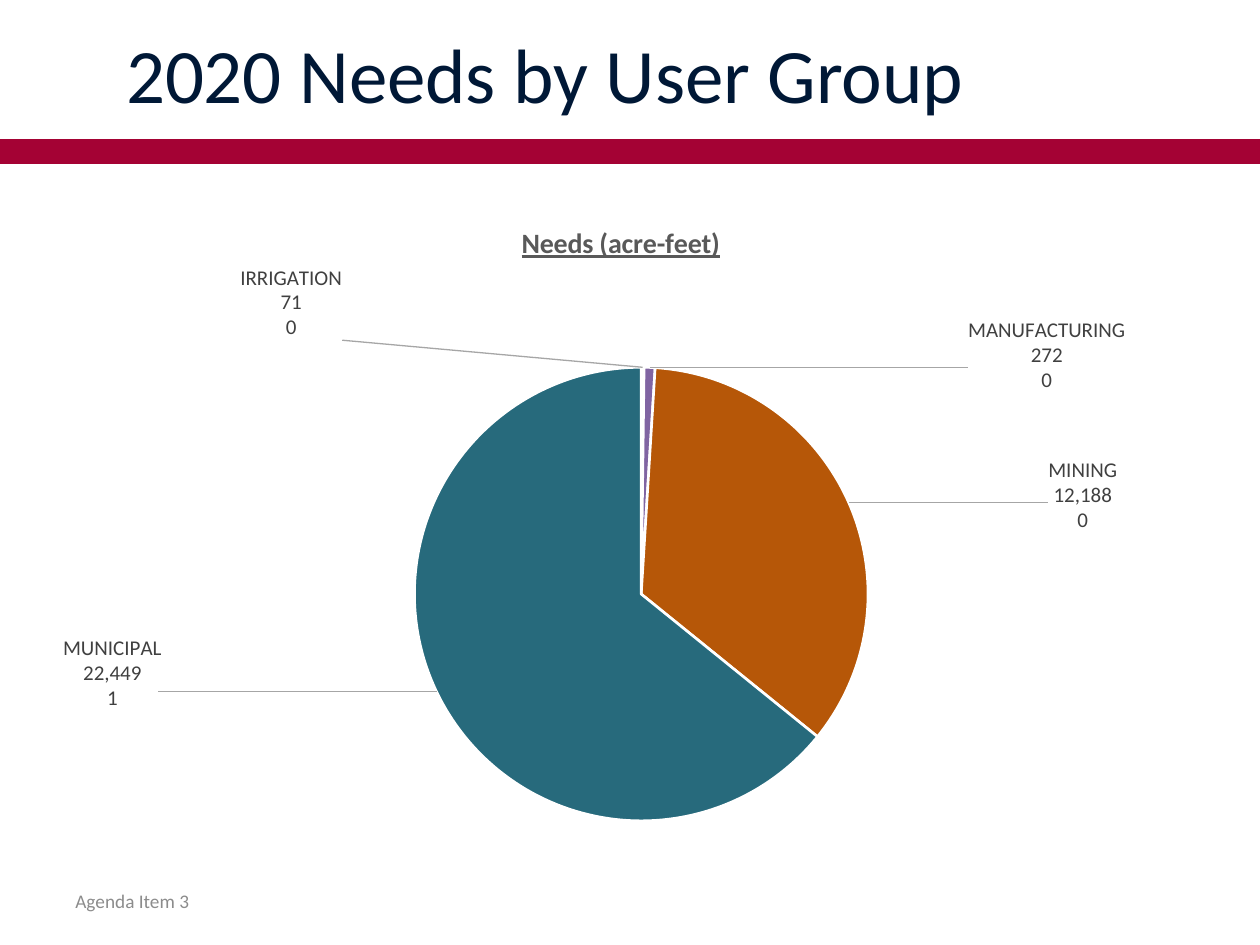
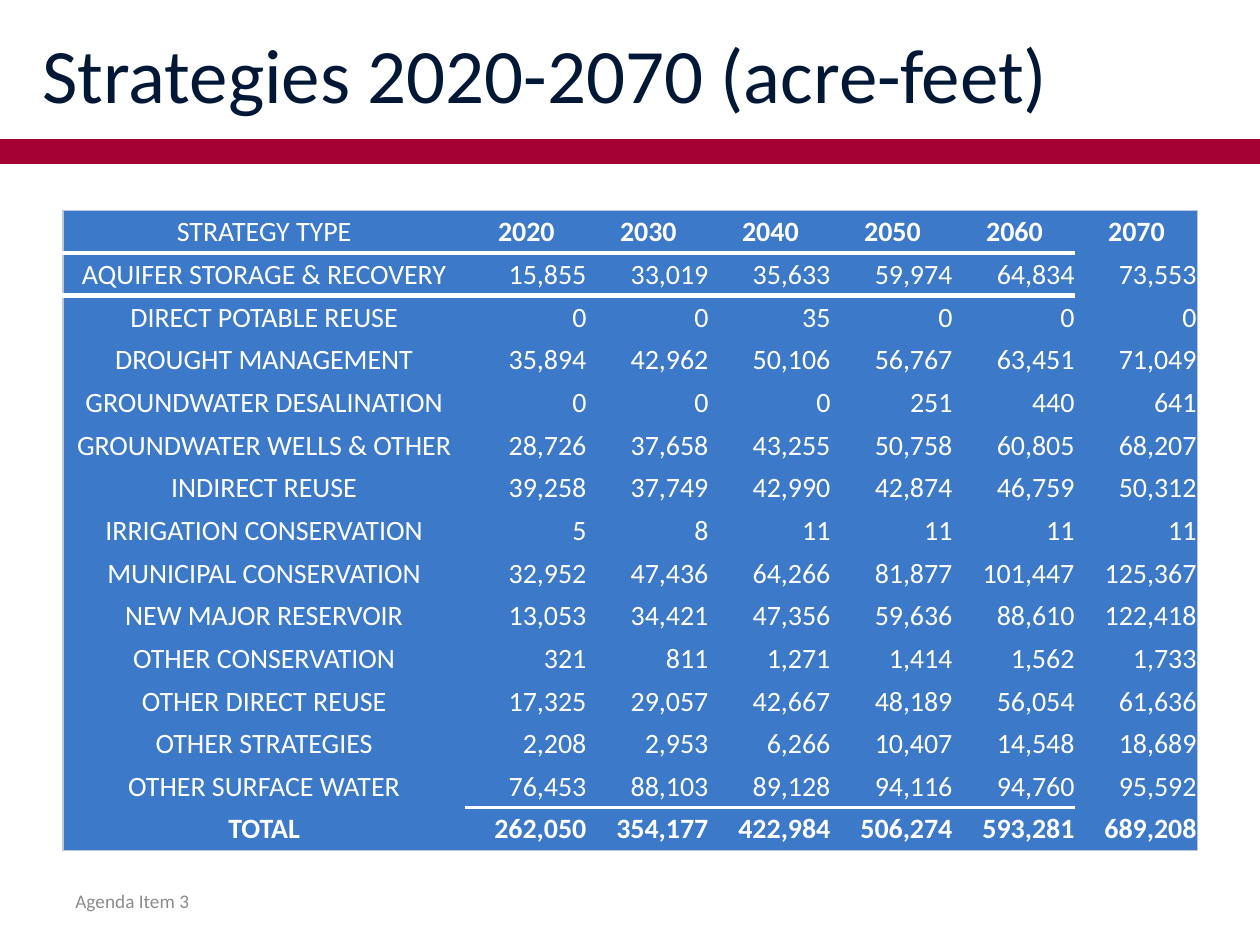
from copy import deepcopy
from pptx import Presentation
from pptx.chart.data import CategoryChartData
from pptx.dml.color import RGBColor
from pptx.enum.chart import XL_CHART_TYPE, XL_LABEL_POSITION
from pptx.enum.shapes import MSO_CONNECTOR
from pptx.enum.text import MSO_ANCHOR, PP_ALIGN
from pptx.oxml import parse_xml
from pptx.oxml.ns import qn
from pptx.oxml.xmlchemy import OxmlElement
from pptx.util import Cm, Pt

PIE = XL_CHART_TYPE.PIE
OUTER = XL_LABEL_POSITION.OUTSIDE_END
STRAIGHT = MSO_CONNECTOR.STRAIGHT
MIDDLE = MSO_ANCHOR.MIDDLE
LEFT, CENTER, RIGHT = PP_ALIGN.LEFT, PP_ALIGN.CENTER, PP_ALIGN.RIGHT

FONT = "Calibri"
NAVY, RED, GREY, WHITE = "001836", "A40234", "8C8C8C", "FFFFFF"
BLUE, EDGE, DARK, TITLE = "3C79C8", "BDC8DD", "404040", "595959"
C_NS = 'xmlns:c="http://schemas.openxmlformats.org/drawingml/2006/chart"'
A_NS = 'xmlns:a="http://schemas.openxmlformats.org/drawingml/2006/main"'
NO_GRID = "{2D5ABB26-0587-4C30-8999-92F81FD0307C}"


def rgb(code):
    return RGBColor.from_string(code)


def style(font, size, color, bold=False):
    font.name, font.size, font.bold = FONT, Pt(size), bold
    font.color.rgb = rgb(color)


deck = Presentation()
deck.slide_width, deck.slide_height = Cm(25.4), Cm(19.05)

# Shared band, title and footer
slides = []
for head in ("2020 Needs by User Group", "Strategies 2020-2070 (acre-feet)"):
    slide = deck.slides.add_slide(deck.slide_layouts[6])
    slides.append(slide)
    band = slide.shapes.add_connector(STRAIGHT, 0, Cm(3.05), Cm(25.4), Cm(3.05))
    band.line.color.rgb = rgb(RED)
    band.line.width = Pt(14)
    band._element.spPr.append(OxmlElement("a:effectLst"))
    for text, spot, size, color, align in (
        (head, (0.2, 0.2, 21.59, 2.54), 44, NAVY, CENTER),
        ("Agenda Item 3", (1.27, 17.65, 5.92, 1.02), 11, GREY, LEFT),
    ):
        box = slide.shapes.add_textbox(*map(Cm, spot))
        frame = box.text_frame
        frame.text = text
        frame.word_wrap = True
        frame.vertical_anchor = MIDDLE
        frame.paragraphs[0].alignment = align
        style(frame.paragraphs[0].runs[0].font, size, color)

# Needs pie: group, value, slice colour, label shift
needs = [
    ("IRRIGATION", 71, "F79646", (-0.31, -0.03)),
    ("LIVESTOCK", 0, "4BACC6", None),
    ("MANUFACTURING", 272, "8064A2", (0.35, 0.05)),
    ("MINING", 12188, "B65708", (0.17, 0.05)),
    ("MUNICIPAL", 22449, "276A7C", (-0.24, -0.09)),
    ("STEAM ELECTRIC POWER", 0, "4D3B62", None),
]
data = CategoryChartData(number_format="#,##0")
data.categories = [need[0] for need in needs]
data.add_series("Needs (acre-feet)", [need[1] for need in needs])
chart = slides[0].shapes.add_chart(
    PIE, Cm(1.27), Cm(3.89), Cm(22.86), Cm(13.26), data).chart
style(chart.font, 10, "000000")
chart.has_legend = False
chart.has_title = True
name = chart.chart_title.text_frame
name.text = "Needs (acre-feet)"
font = name.paragraphs[0].runs[0].font
style(font, 16, TITLE, True)
font.underline = True

# Fixed places for the chart title and the pie
for part, mode, spot in (
    (chart.chart_title._element, "", {"x": 0.4, "y": 0.04}),
    (chart._chartSpace.chart.plotArea, '<c:layoutTarget val="inner"/>',
     {"x": 0.31, "y": 0.26, "w": 0.4, "h": 0.7}),
):
    for old in part.findall(qn("c:layout")):
        part.remove(old)
    modes = "".join(f'<c:{k}Mode val="edge"/>' for k in "xy")
    sizes = "".join(f'<c:{k} val="{v}"/>' for k, v in spot.items())
    layout = parse_xml(f"<c:layout {C_NS}><c:manualLayout>{mode}{modes}{sizes}"
                       "</c:manualLayout></c:layout>")
    text = part.find(qn("c:tx"))
    if text is None:
        part.insert(0, layout)
    else:
        text.addnext(layout)

# Slices
plot = chart.plots[0]
plot.vary_by_categories = True
pie = plot.series[0]
for i, need in enumerate(needs):
    form = pie.points[i].format
    form.fill.solid()
    form.fill.fore_color.rgb = rgb(need[2])
    form.line.color.rgb = rgb(WHITE)
    form.line.width = Pt(1.5)

# Labels with leader lines
tags = pie.data_labels
style(tags.font, 12, DARK)
tags.number_format, tags.number_format_is_linked = "#,##0", False
tags.position = OUTER
tags.show_value = tags.show_category_name = tags.show_percentage = True
root = tags._element
for old in root.findall(qn("c:showLeaderLines")):
    root.remove(old)
split = OxmlElement("c:separator")
split.text = "\n"
root.append(split)
common = list(root)
for i, need in enumerate(needs):
    if need[3]:
        x, y = need[3]
        body = (f'<c:layout><c:manualLayout><c:x val="{x}"/><c:y val="{y}"/>'
                "</c:manualLayout></c:layout>")
    else:
        body = '<c:delete val="1"/>'
    tag = parse_xml(f'<c:dLbl {C_NS}><c:idx val="{i}"/>{body}</c:dLbl>')
    if need[3]:
        tag.extend(deepcopy(item) for item in common)
    root.insert(i, tag)
root.append(parse_xml(f'<c:showLeaderLines {C_NS} val="1"/>'))
root.append(parse_xml(
    f'<c:leaderLines {C_NS} {A_NS}><c:spPr><a:ln w="9525"><a:solidFill>'
    '<a:srgbClr val="A6A6A6"/></a:solidFill></a:ln></c:spPr></c:leaderLines>'))

# Strategy table
rows = [
    ("STRATEGY TYPE", 2020, 2030, 2040, 2050, 2060, 2070),
    ("AQUIFER STORAGE & RECOVERY", 15855, 33019, 35633, 59974, 64834, 73553),
    ("DIRECT POTABLE REUSE", 0, 0, 35, 0, 0, 0),
    ("DROUGHT MANAGEMENT", 35894, 42962, 50106, 56767, 63451, 71049),
    ("GROUNDWATER DESALINATION", 0, 0, 0, 251, 440, 641),
    ("GROUNDWATER WELLS & OTHER", 28726, 37658, 43255, 50758, 60805, 68207),
    ("INDIRECT REUSE", 39258, 37749, 42990, 42874, 46759, 50312),
    ("IRRIGATION CONSERVATION", 5, 8, 11, 11, 11, 11),
    ("MUNICIPAL CONSERVATION", 32952, 47436, 64266, 81877, 101447, 125367),
    ("NEW MAJOR RESERVOIR", 13053, 34421, 47356, 59636, 88610, 122418),
    ("OTHER CONSERVATION", 321, 811, 1271, 1414, 1562, 1733),
    ("OTHER DIRECT REUSE", 17325, 29057, 42667, 48189, 56054, 61636),
    ("OTHER STRATEGIES", 2208, 2953, 6266, 10407, 14548, 18689),
    ("OTHER SURFACE WATER", 76453, 88103, 89128, 94116, 94760, 95592),
    ("TOTAL", 262050, 354177, 422984, 506274, 593281, 689208),
]
last, end = len(rows) - 1, len(rows[0]) - 1
table = slides[1].shapes.add_table(
    len(rows), len(rows[0]), Cm(1.27), Cm(4.24), Cm(22.87), Cm(12.9)).table
table.first_row = table.horz_banding = False
table._tbl.tblPr.find(qn("a:tableStyleId")).text = NO_GRID
for c, col in enumerate(table.columns):
    col.width = Cm(2.46 if c else 8.11)

for r, row in enumerate(rows):
    table.rows[r].height = Cm(0.86)
    for c, value in enumerate(row):
        cell = table.cell(r, c)
        cell.text = f"{value:,}" if r and c else str(value)
        cell.margin_left = cell.margin_right = cell.margin_top = Cm(0.02)
        cell.margin_bottom = 0
        cell.vertical_anchor = MIDDLE
        cell.fill.solid()
        cell.fill.fore_color.rgb = rgb(BLUE)
        para = cell.text_frame.paragraphs[0]
        para.alignment = RIGHT if r and c else CENTER
        bold = r == last or (r == 0 and c > 0)
        style(para.runs[0].font, 16, WHITE, bold)

        # Outer frame, header rule and total rule
        rules = {}
        if c == 0:
            rules["L"] = EDGE, 0.75
        if c == end:
            rules["R"] = EDGE, 0.75
        if r == 0:
            rules["T"] = EDGE, 0.75
        if r == last:
            rules["B"] = EDGE, 0.75
        if c < end and r < 2:
            rules["T" if r else "B"] = WHITE, 3
        if 0 < c < end and r >= last - 1:
            rules["T" if r == last else "B"] = WHITE, 2
        sides = [side for side in "LRTB" if side in rules]
        for i, side in enumerate(sides):
            color, width = rules[side]
            cell._tc.tcPr.insert(i, parse_xml(
                f'<a:ln{side} {A_NS} w="{Pt(width)}"><a:solidFill>'
                f'<a:srgbClr val="{color}"/></a:solidFill></a:ln{side}>'))

deck.save("out.pptx")
